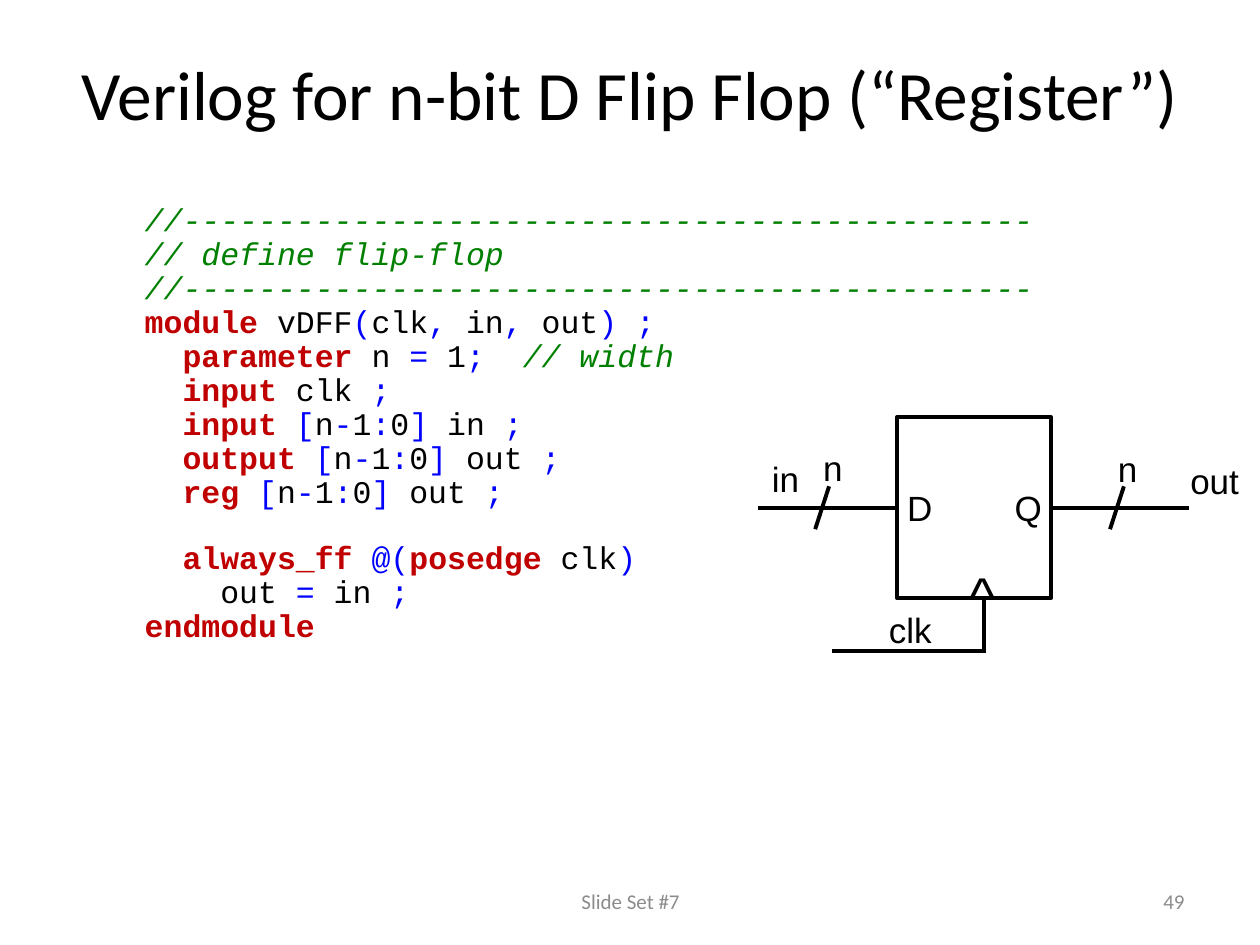
from dataclasses import dataclass
from itertools import groupby

from lxml import etree
from pptx import Presentation, util as u
from pptx.dml.color import RGBColor
from pptx.enum import shapes, text
from pptx.oxml.ns import qn


@dataclass(frozen=True)
class Theme:
    ink: str = "000000"
    gray: str = "8C8C8C"
    key: str = "C00000"
    sign: str = "0000FF"
    note: str = "008000"
    head: str = "Calibri"
    mono: str = "Courier New"
    sans: str = "Arial"
    title: float = 39.6
    label: int = 20
    clock: int = 32
    code: int = 18
    foot: int = 12
    line: float = 2.25


KEYS = {"module", "parameter", "input", "output", "reg", "always_ff",
        "posedge", "endmodule"}
RULE = "//" + "-" * 45
CODE = f"""{RULE}
// define flip-flop
{RULE}
module vDFF(clk, in, out) ;
  parameter n = 1;  // width
  input clk ;
  input [n-1:0] in ;
  output [n-1:0] out ;
  reg [n-1:0] out ;

  always_ff @(posedge clk)
    out = in ;
endmodule"""


def kind(char):
    if char.isspace():
        return "space"
    return "word" if char.isalnum() or char == "_" else "sign"


def lex(line):
    """Split a line of Verilog into (style, text) runs."""
    body, mark, note = line.partition("//")
    runs = []
    for sort, chars in groupby(body, kind):
        part = "".join(chars)
        style = "sign" if sort == "sign" else "key" if part in KEYS else "ink"
        if sort == "space" and runs:
            style = runs[-1][0]
        if runs and runs[-1][0] == style:
            part = runs.pop()[1] + part
        runs.append((style, part))
    if mark:
        runs.append(("note", mark + note))
    return runs


class Page:
    """A slide on a grid of 100 columns by 75 rows."""

    def __init__(self, deck, theme):
        self.theme = theme
        self.col = deck.slide_width / 100
        self.row = deck.slide_height / 75
        self.slide = deck.slides.add_slide(deck.slide_layouts[6])
        self.pen = self.slide.shapes

    def place(self, x, y, w, h):
        return (round(x * self.col), round(y * self.row),
                round(w * self.col), round(h * self.row))

    def group(self):
        self.pen = self.slide.shapes.add_group_shape().shapes

    def ungroup(self):
        self.pen = self.slide.shapes

    def frame(self, spot, wrap=True, pad=True):
        frame = self.pen.add_textbox(*self.place(*spot)).text_frame
        frame.word_wrap = wrap
        frame.vertical_anchor = text.MSO_ANCHOR.MIDDLE
        if not pad:
            frame.margin_left = frame.margin_right = 0
            frame.margin_top = frame.margin_bottom = 0
        return frame

    def run(self, para, words, face, size, color):
        run = para.add_run()
        run.text = words
        run.font.name = face
        run.font.size = u.Pt(size)
        run.font.color.rgb = RGBColor.from_string(color)
        return run

    def words(self, spot, words, size, color, align=text.PP_ALIGN.CENTER):
        para = self.frame(spot).paragraphs[0]
        para.alignment = align
        self.run(para, words, self.theme.head, size, color)

    def label(self, spot, words, size=None, wrap=False):
        para = self.frame(spot, wrap, pad=False).paragraphs[0]
        para.alignment = text.PP_ALIGN.CENTER
        look = self.theme
        self.run(para, words, look.sans, size or look.label, look.ink)

    def code(self, spot, source):
        frame = self.frame(spot, wrap=False)
        frame.vertical_anchor = text.MSO_ANCHOR.TOP
        frame.auto_size = text.MSO_AUTO_SIZE.SHAPE_TO_FIT_TEXT
        look, para, gap = self.theme, None, 0
        for line in source.splitlines():
            if not line:
                gap = look.code * 1.02
                continue
            para = frame.add_paragraph() if para else frame.paragraphs[0]
            para.line_spacing = 0.9
            para.space_before = u.Pt(gap)
            gap = 0
            for style, part in lex(line):
                run = self.run(para, part, look.mono, look.code,
                               getattr(look, style))
                run.font.bold = style == "key"
                run.font.italic = style == "note"

    def stroke(self, line):
        line.color.rgb = RGBColor.from_string(self.theme.ink)
        line.width = u.Pt(self.theme.line)

    def box(self, spot):
        box = self.pen.add_shape(shapes.MSO_SHAPE.RECTANGLE, *self.place(*spot))
        box.shadow.inherit = False
        box.fill.background()
        self.stroke(box.line)

    def wire(self, *ends):
        wire = self.pen.add_connector(shapes.MSO_CONNECTOR.STRAIGHT,
                                      *self.place(*ends))
        self.stroke(wire.line)
        etree.SubElement(wire._element.spPr, qn("a:effectLst"))


def main():
    deck = Presentation()
    deck.slide_width, deck.slide_height = u.Inches(10), u.Inches(7.5)
    look = Theme()
    page = Page(deck, look)

    # Title and listing
    page.words((5, 1.1, 90, 12.5), "Verilog for n-bit D Flip Flop (“Register”)",
               look.title, look.ink)
    page.code((10.5, 15.7, 72.9, 39.5), CODE)

    # Register body and its pins
    page.group()
    left, right, base, mid = 71.2, 83.4, 47.5, 40.3
    page.box((left, 33.1, right - left, base - 33.1))
    page.label((72, 38.6, 2, 3.3), "D")
    page.label((80.5, 38.6, 2.2, 3.3), "Q")
    page.label((76.9, 44.6, 2.1, 5.3), "^", look.clock)

    # Data wires with bus marks
    for start, slash, top in ((left - 11, 65.8, 35.4), (right, 89.2, 35.5)):
        page.wire(start, mid, start + 11, mid)
        page.wire(slash, mid - 1.7, slash - 1.1, mid + 1.7)
        page.label((slash - 0.5, top, 1.6, 3.4), "n")
    page.label((61.1, 36.3, 2.5, 3.4), "in", wrap=True)
    page.label((93.7, 36.4, 5.4, 3.4), "out", wrap=True)

    # Clock wire
    page.wire(78.1, base, 78.1, 51.8)
    page.wire(77.9, 51.7, 66, 51.7)
    page.label((69.3, 48.3, 5.9, 3.3), "clk", wrap=True)
    page.ungroup()

    # Footer
    page.words((71.7, 69.5, 23.3, 4), "49", look.foot, look.gray,
               text.PP_ALIGN.RIGHT)
    page.words((34.2, 69.5, 31.7, 4), "Slide Set #7", look.foot, look.gray)

    deck.save("out.pptx")


if __name__ == "__main__":
    main()
